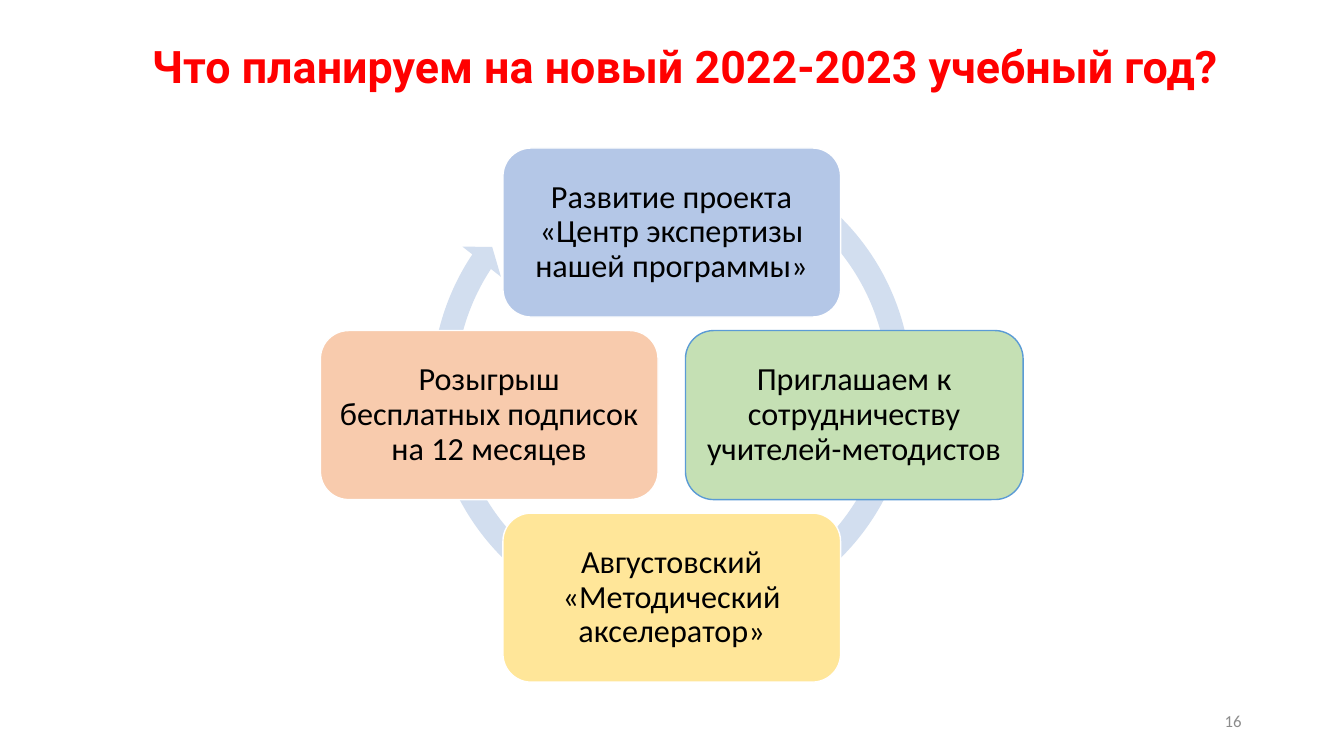
import pptx
import pptx.dml.color
import pptx.enum.shapes
import pptx.enum.text
import pptx.util

Cm = pptx.util.Cm
Pt = pptx.util.Pt
RGBColor = pptx.dml.color.RGBColor
Align = pptx.enum.text.PP_ALIGN
Shape = pptx.enum.shapes.MSO_SHAPE

RED = RGBColor(0xFF, 0x00, 0x00)
BLACK = RGBColor(0x00, 0x00, 0x00)
GRAY = RGBColor(0x8C, 0x8C, 0x8C)
WHITE = RGBColor(0xFF, 0xFF, 0xFF)
PALE_BLUE = RGBColor(0xD2, 0xDE, 0xEF)
BLUE = RGBColor(0xB4, 0xC7, 0xE7)
GREEN = RGBColor(0xC5, 0xE0, 0xB4)
YELLOW = RGBColor(0xFF, 0xE6, 0x99)
ORANGE = RGBColor(0xF8, 0xCB, 0xAD)
OUTLINE_BLUE = RGBColor(0x5B, 0x9B, 0xD5)

CENTER_X, CENTER_Y = 16.93, 10.46
STEP = 4.6
CARD_WIDTH, CARD_HEIGHT = 8.51, 4.26
RING_SIZE, RING_CENTER_Y = 12.73, 9.77
RING_ADJUSTMENTS = (0.0467, 2.729, 128.119, 180.442, 0.0485)

PLANS = (
    ("Развитие проекта «Центр экспертизы нашей программы»", 0, -1, BLUE, WHITE),
    ("Приглашаем к сотрудничеству учителей-методистов", 1, 0, GREEN, OUTLINE_BLUE),
    ("Августовский «Методический акселератор»", 0, 1, YELLOW, WHITE),
    ("Розыгрыш бесплатных подписок на 12 месяцев", -1, 0, ORANGE, WHITE),
)


def write(frame, text, size, color, font="Calibri", bold=False,
          align=Align.CENTER, spacing=0.9, margin=0.25):
    frame.word_wrap = True
    frame.auto_size = pptx.enum.text.MSO_AUTO_SIZE.NONE
    frame.vertical_anchor = pptx.enum.text.MSO_ANCHOR.MIDDLE
    frame.margin_left = frame.margin_right = Cm(margin)
    paragraph = frame.paragraphs[0]
    paragraph.alignment = align
    paragraph.line_spacing = spacing
    run = paragraph.add_run()
    run.text = text
    run.font.name = font
    run.font.size = Pt(size)
    run.font.bold = bold
    run.font.color.rgb = color


def add_title(slide, text):
    title = slide.shapes.title
    title.left, title.top = Cm(3.58), Cm(0.43)
    title.width, title.height = Cm(29.87), Cm(2.62)
    write(title.text_frame, text, 32, RED, font="Roboto", bold=True, align=Align.LEFT)


def add_centered(slide, kind, x, y, width, height, fill):
    shape = slide.shapes.add_shape(
        kind, Cm(x - width / 2), Cm(y - height / 2), Cm(width), Cm(height))
    shape.shadow.inherit = False
    shape.fill.solid()
    shape.fill.fore_color.rgb = fill
    return shape


def add_ring(slide):
    ring = add_centered(slide, Shape.CIRCULAR_ARROW, CENTER_X, RING_CENTER_Y,
                        RING_SIZE, RING_SIZE, PALE_BLUE)
    ring.line.fill.background()
    for index, value in enumerate(RING_ADJUSTMENTS):
        ring.adjustments[index] = value


def add_plan(slide, text, column, row, fill, outline):
    card = add_centered(slide, Shape.ROUNDED_RECTANGLE, CENTER_X + column * STEP,
                        CENTER_Y + row * STEP, CARD_WIDTH, CARD_HEIGHT, fill)
    card.line.color.rgb = outline
    card.line.width = Pt(1)
    write(card.text_frame, text, 23, BLACK, margin=0.22)


def add_page_number(slide, number):
    box = slide.shapes.add_textbox(Cm(23.92), Cm(17.66), Cm(7.62), Cm(1.01))
    write(box.text_frame, number, 12, GRAY, align=Align.RIGHT, spacing=1.0)


def main():
    deck = pptx.Presentation()
    deck.slide_width, deck.slide_height = Cm(33.87), Cm(19.05)
    slide = deck.slides.add_slide(deck.slide_layouts.get_by_name("Title Only"))
    add_title(slide, "Что планируем на новый 2022-2023 учебный год?")
    add_ring(slide)
    for plan in PLANS:
        add_plan(slide, *plan)
    add_page_number(slide, "16")
    deck.save("out.pptx")


if __name__ == "__main__":
    main()
